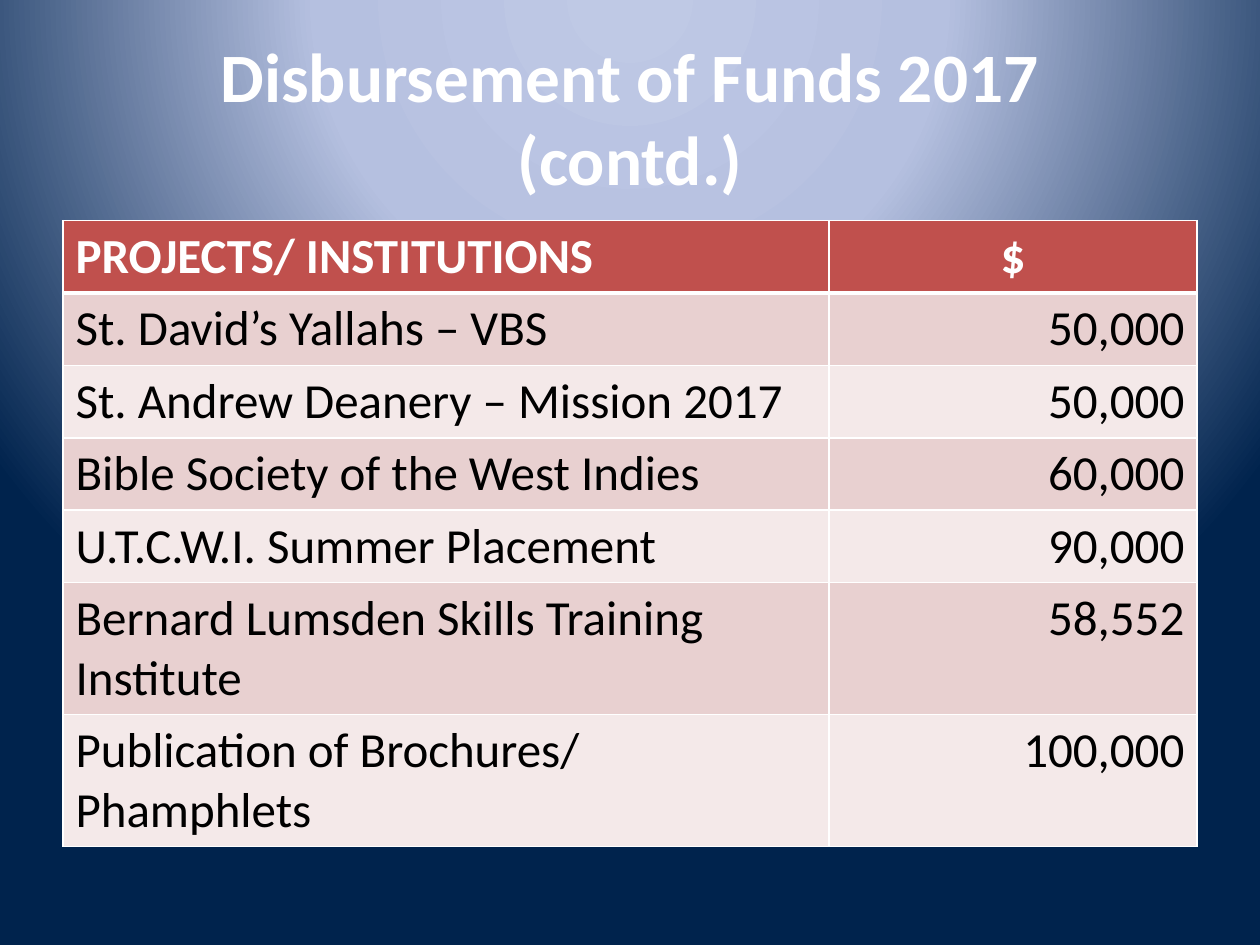
from dataclasses import dataclass

from lxml import etree
from pptx import Presentation
from pptx import util as u
from pptx.dml.color import RGBColor
from pptx.enum import text
from pptx.oxml import parse_xml
from pptx.oxml.ns import nsdecls, qn


@dataclass(frozen=True)
class Theme:
    font: str = "Calibri"
    title_size: float = 39.6
    table_size: float = 28
    light: str = "FFFFFF"
    dark: str = "000000"
    header: str = "C0504D"
    bands: tuple = ("E8D0D0", "F4E9E9")
    glow: tuple = ((0, "BFC9E5"), (40, "B5C0E0"), (100, "00234D"))


class Deck:
    def __init__(self, theme):
        self.theme = theme
        self.prs = Presentation()
        self.prs.slide_width, self.prs.slide_height = u.Pt(720), u.Pt(540)
        self.slide = self.prs.slides.add_slide(self.prs.slide_layouts[6])

    def background(self):
        fill = self.slide.background.fill
        fill.gradient()
        gradient = self.slide.background._cSld.find(".//" + qn("a:gradFill"))
        stops = "".join(
            f'<a:gs pos="{pos * 1000}"><a:srgbClr val="{color}"/></a:gs>'
            for pos, color in self.theme.glow
        )
        gradient.getparent().replace(gradient, parse_xml(
            f'<a:gradFill {nsdecls("a")} rotWithShape="1"><a:gsLst>{stops}</a:gsLst>'
            '<a:path path="circle"><a:fillToRect l="50000" t="-80000" '
            'r="50000" b="180000"/></a:path></a:gradFill>'
        ))

    def style(self, paragraph, size, color, bold, align):
        paragraph.alignment = align
        for run in paragraph.runs:
            run.font.name, run.font.size, run.font.bold = self.theme.font, u.Pt(size), bold
            run.font.color.rgb = RGBColor.from_string(color)

    def title(self, wording, left, top, width, height):
        heading = self.slide.shapes.add_textbox(*map(u.Pt, (left, top, width, height))).text_frame
        heading.word_wrap = True
        heading.vertical_anchor = text.MSO_ANCHOR.MIDDLE
        heading.text = wording
        for line in heading.paragraphs:
            self.style(line, self.theme.title_size, self.theme.light, True, text.PP_ALIGN.CENTER)

    def borders(self, cell, top, bottom):
        properties = cell._tc.get_or_add_tcPr()
        for index, (side, width) in enumerate((("L", 1), ("R", 1), ("T", top), ("B", bottom))):
            line = etree.Element(qn(f"a:ln{side}"), w=str(u.Pt(width)))
            solid = etree.SubElement(line, qn("a:solidFill"))
            etree.SubElement(solid, qn("a:srgbClr"), val=self.theme.light)
            properties.insert(index, line)

    def cell(self, cell, wording, row, align):
        is_header = row == 0
        cell.text = wording
        cell.fill.solid()
        cell.fill.fore_color.rgb = RGBColor.from_string(
            self.theme.header if is_header else self.theme.bands[(row - 1) % 2])
        self.style(cell.text_frame.paragraphs[0], self.theme.table_size,
                   self.theme.light if is_header else self.theme.dark, is_header, align)
        self.borders(cell, 3 if row == 1 else 1, 3 if is_header else 1)

    def table(self, records, left, top, widths, heights):
        grid = self.slide.shapes.add_table(
            len(records), len(widths),
            *map(u.Pt, (left, top, sum(widths), sum(heights)))).table
        for column, width in zip(grid.columns, widths):
            column.width = u.Pt(width)
        for row, (project, amount) in enumerate(records):
            grid.rows[row].height = u.Pt(heights[row])
            amount_align = text.PP_ALIGN.RIGHT if row else text.PP_ALIGN.CENTER
            self.cell(grid.cell(row, 0), project, row, text.PP_ALIGN.LEFT)
            self.cell(grid.cell(row, 1), amount, row, amount_align)


def main():
    disbursements = [
        ("PROJECTS/ INSTITUTIONS", "$"),
        ("St. David’s Yallahs – VBS", "50,000"),
        ("St. Andrew Deanery – Mission 2017", "50,000"),
        ("Bible Society of the West Indies", "60,000"),
        ("U.T.C.W.I. Summer Placement", "90,000"),
        ("Bernard Lumsden Skills Training Institute", "58,552"),
        ("Publication of Brochures/ Phamphlets", "100,000"),
    ]
    deck = Deck(Theme())
    deck.background()
    deck.title("Disbursement of Funds 2017\v(contd.)", 36, 21.6, 648, 90)
    deck.table(disbursements, 36, 126, (437.76, 210.24), [41.4] * 5 + [75.4] * 2)
    deck.prs.save("out.pptx")


if __name__ == "__main__":
    main()
